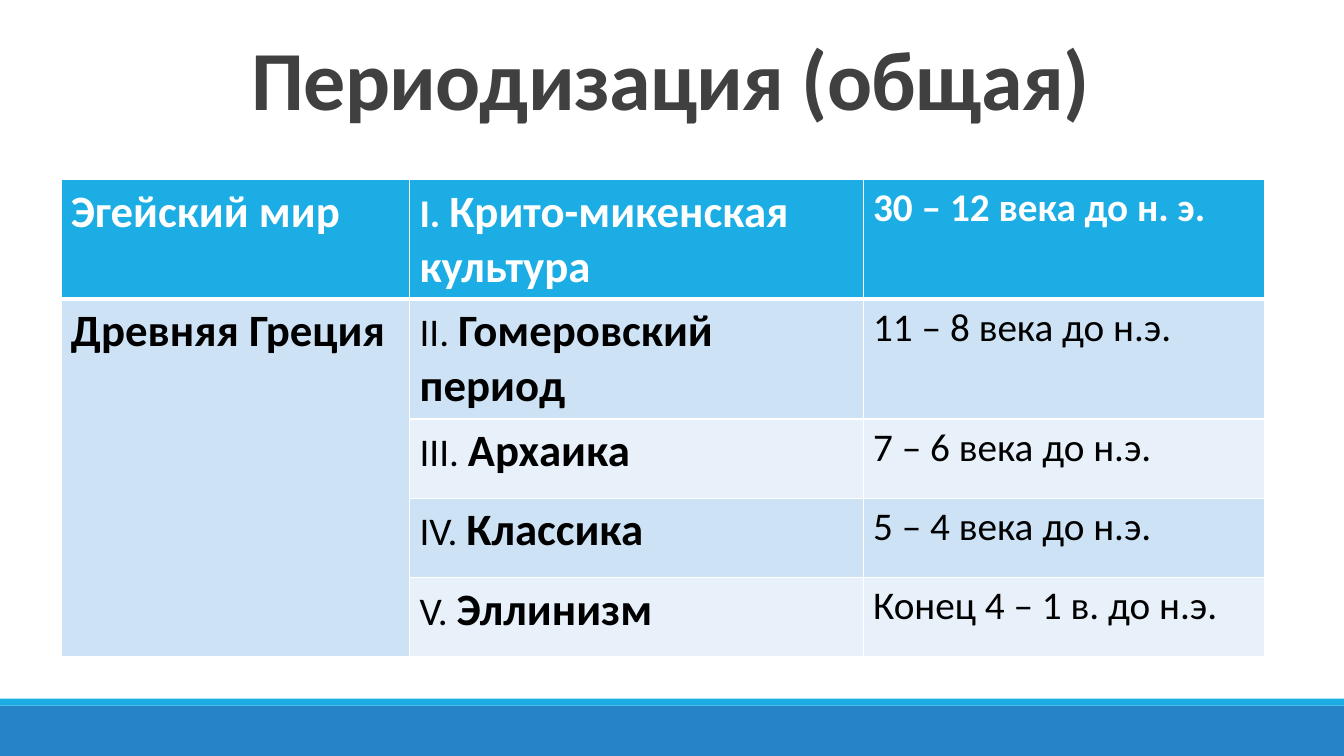
from dataclasses import dataclass

from lxml.etree import SubElement
from pptx import Presentation
from pptx.dml.color import RGBColor
from pptx.enum.shapes import MSO_SHAPE
from pptx.enum.text import MSO_ANCHOR, MSO_AUTO_SIZE, PP_ALIGN
from pptx.oxml.ns import qn
from pptx.util import Pt


@dataclass(frozen=True)
class Theme:
    font: str = "Calibri"
    title_size: int = 60
    name_size: int = 32
    detail_size: int = 28
    title: str = "404040"
    text: str = "000000"
    light: str = "FFFFFF"
    accent: str = "1CADE4"
    footer: str = "2683C6"
    bands: tuple = ("CDE3F5", "E8F1FA")


def set_format(target, values):
    for name, value in values.items():
        setattr(target, name, value)


class SlideBuilder:
    def __init__(self, prs, theme):
        self.theme = theme
        self.slide = prs.slides.add_slide(prs.slide_layouts[5])

    def add_run(self, p, text, size, color, bold):
        r = p.add_run()
        r.text = text
        set_format(r.font, {"name": self.theme.font, "size": Pt(size), "bold": bold})
        r.font.color.rgb = RGBColor.from_string(color)
        return r

    def title(self, text, left, top, width, height):
        sp = self.slide.shapes.title
        set_format(sp, {"left": Pt(left), "top": Pt(top),
                        "width": Pt(width), "height": Pt(height)})
        tf = sp.text_frame
        set_format(tf, {"word_wrap": True, "auto_size": MSO_AUTO_SIZE.NONE,
                        "vertical_anchor": MSO_ANCHOR.BOTTOM})
        p = tf.paragraphs[0]
        set_format(p, {"alignment": PP_ALIGN.CENTER, "line_spacing": 0.85})
        r = self.add_run(p, text, self.theme.title_size, self.theme.title, True)
        r.font._element.set("spc", "-50")

    def bar(self, left, top, width, height, color):
        sp = self.slide.shapes.add_shape(
            MSO_SHAPE.RECTANGLE, Pt(left), Pt(top), Pt(width), Pt(height))
        sp.shadow.inherit = False
        sp.fill.solid()
        sp.fill.fore_color.rgb = RGBColor.from_string(color)
        sp.line.fill.background()

    def borders(self, cell, widths):
        """Draw the left, right, top and bottom borders, in that order."""
        tcPr = cell._tc.get_or_add_tcPr()
        for side, width in zip("LRTB", widths):
            ln = SubElement(tcPr, qn(f"a:ln{side}"), w=str(Pt(width)))
            fill = SubElement(ln, qn("a:solidFill"))
            SubElement(fill, qn("a:srgbClr"), val=self.theme.light)

    def table(self, rows, left, top, widths, heights):
        """Fill a table; each cell is a list of (text, size, bold) runs."""
        th = self.theme
        tbl = self.slide.shapes.add_table(
            len(rows), len(widths), Pt(left), Pt(top),
            Pt(sum(widths)), Pt(sum(heights))).table
        set_format(tbl, {"first_row": False, "horz_banding": False})
        for column, width in zip(tbl.columns, widths):
            column.width = Pt(width)
        for i, (row, height) in enumerate(zip(rows, heights)):
            tbl.rows[i].height = Pt(height)
            fill = th.bands[(i - 1) % 2] if i else th.accent
            color = th.text if i else th.light
            for j, runs in enumerate(row):
                cell = tbl.cell(i, j)
                self.borders(cell, (1, 1, 3 if i == 1 else 1, 1 if i else 3))
                cell.fill.solid()
                cell.fill.fore_color.rgb = RGBColor.from_string(fill)
                for text, size, bold in runs:
                    self.add_run(cell.text_frame.paragraphs[0],
                                 text, size, color, bold)
        return tbl


def period_rows(theme):
    periods = [
        ("Эгейский мир", "I. ", "Крито-микенская культура", "30 – 12 века до н. э."),
        ("Древняя Греция", "II. ", "Гомеровский период", "11 – 8 века до н.э."),
        ("", "III. ", "Архаика", "7 – 6 века до н.э."),
        ("", "IV. ", "Классика", "5 – 4 века до н.э."),
        ("", "V. ", "Эллинизм", "Конец 4 – 1 в. до н.э."),
    ]
    rows = []
    for i, (world, number, period, dates) in enumerate(periods):
        header = i == 0
        rows.append([
            [(world, theme.name_size, True)] if world else [],
            [(number, theme.detail_size, header), (period, theme.name_size, True)],
            [(dates, theme.detail_size, header)],
        ])
    return rows


def main():
    prs = Presentation()
    set_format(prs, {"slide_width": Pt(960), "slide_height": Pt(540)})
    theme = Theme()
    s = SlideBuilder(prs, theme)
    s.bar(0, 504, 960, 36, theme.footer)
    s.bar(0, 499, 960, 5, theme.accent)
    s.title("Периодизация (общая)", 82.8, -19.4, 792, 114.5)
    tbl = s.table(period_rows(theme), 43.5, 128.3,
                  widths=(249, 324, 286.5), heights=(85, 85, 56.7, 56.7, 56.7))
    tbl.cell(1, 0).merge(tbl.cell(4, 0))
    prs.save("out.pptx")


if __name__ == "__main__":
    main()
